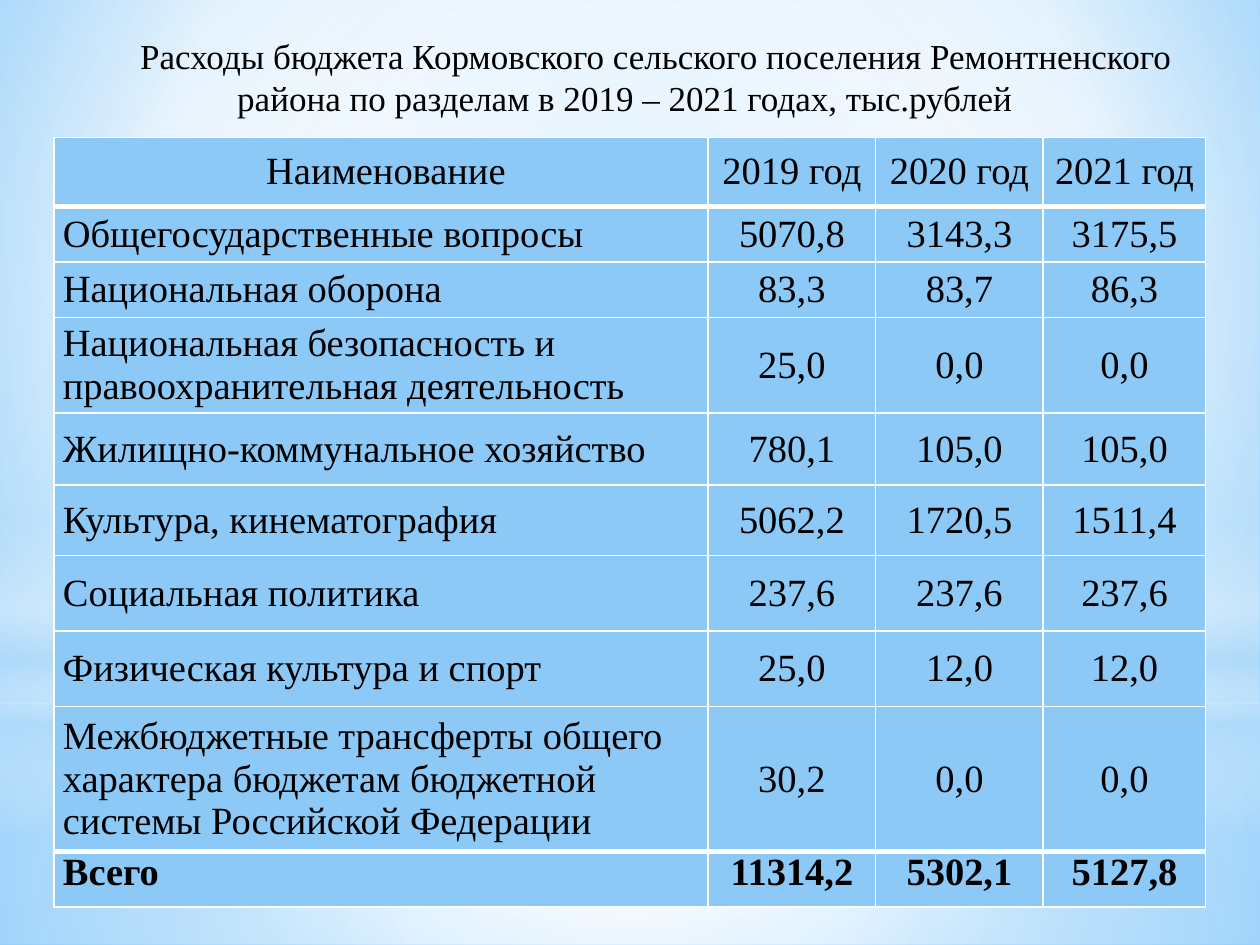
"""Build a slide with a table of village budget spending by section."""
from lxml import etree
from pptx import Presentation, util as u
from pptx.dml import color
from pptx.enum import shapes, text
from pptx.oxml import ns

COLORS = {"white": "FFFFFF", "black": "000000", "cell": "8CC9F7",
          "mist": "B4DCFA", "sky": "9ED5FF", "deep": "5BB9FF"}
GRID_COLS, GRID_ROWS = 100, 75
CENTER = (50, 50, 50, 50)
COL_WIDTHS = (51.9, 13.3, 13.3, 12.9)
ROW_HEIGHTS = (5.5, 4.4, 4.4, 7.6, 5.7, 5.6, 6, 6, 11.5, 4.4)
TITLE = ("Расходы бюджета Кормовского сельского поселения Ремонтненского "
         "района по разделам в 2019 – 2021 годах, тыс.рублей")
SPENDING = (
    (" Наименование", "2019 год", "2020 год", "2021 год"),
    ("Общегосударственные вопросы", "5070,8", "3143,3", "3175,5"),
    ("Национальная оборона", "83,3", "83,7", "86,3"),
    ("Национальная безопасность и правоохранительная деятельность",
     "25,0", "0,0", "0,0"),
    ("Жилищно-коммунальное хозяйство", "780,1", "105,0", "105,0"),
    ("Культура, кинематография", "5062,2", "1720,5", "1511,4"),
    ("Социальная политика", "237,6", "237,6", "237,6"),
    ("Физическая культура и спорт", "25,0", "12,0", "12,0"),
    ("Межбюджетные трансферты общего характера бюджетам бюджетной системы "
     "Российской Федерации", "30,2", "0,0", "0,0"),
    ("Всего", "11314,2", "5302,1", "5127,8"),
)


class Deck:
    """Hold the style and the current slide, and draw its elements."""

    def __init__(self, prs, font="Times New Roman"):
        self.s = prs.slides.add_slide(prs.slide_layouts[6])
        self.font = font
        self.col = prs.slide_width / GRID_COLS
        self.row = prs.slide_height / GRID_ROWS

    def box(self, x, y, w, h):
        """Turn grid columns and rows into slide lengths."""
        return (round(x * self.col), round(y * self.row),
                round(w * self.col), round(h * self.row))

    def gradient(self, fill, element, stops, center=None):
        """Fill with stops of position, colour and opacity."""
        fill.gradient()
        grad = element.find(".//" + ns.qn("a:gradFill"))
        for child in list(grad):
            grad.remove(child)
        gs_list = etree.SubElement(grad, ns.qn("a:gsLst"))
        for pos, name, alpha in stops:
            gs = etree.SubElement(gs_list, ns.qn("a:gs"), pos=str(pos * 1000))
            clr = etree.SubElement(gs, ns.qn("a:srgbClr"), val=COLORS[name])
            etree.SubElement(clr, ns.qn("a:alpha"), val=str(alpha * 1000))
        if center:
            circle = etree.SubElement(grad, ns.qn("a:path"), path="circle")
            sides = {side: str(share * 1000) for side, share in zip("ltrb", center)}
            etree.SubElement(circle, ns.qn("a:fillToRect"), sides)
        else:
            etree.SubElement(grad, ns.qn("a:lin"), ang="5400000", scaled="0")

    def background(self, stops, center):
        """Fill the slide background."""
        self.gradient(self.s.background.fill, self.s.element, stops, center)

    def glow(self, kind, place, stops, center=None):
        """Add a translucent gradient shape."""
        sp = self.s.shapes.add_shape(kind, *self.box(*place))
        sp.shadow.inherit = False
        sp.line.fill.background()
        self.gradient(sp.fill, sp.element, stops, center)

    def label(self, tf, words, size, align, bold=False):
        """Put one formatted paragraph in a text frame."""
        tf.text = words
        p = tf.paragraphs[0]
        p.alignment = align
        font = p.runs[0].font
        font.name, font.size, font.bold = self.font, u.Pt(size), bold
        font.color.rgb = color.RGBColor.from_string(COLORS["black"])
        return p

    def title(self, place, words):
        """Add the centred heading with its first-line indent."""
        tf = self.s.shapes.add_textbox(*self.box(*place)).text_frame
        tf.word_wrap = True
        tf.vertical_anchor = text.MSO_ANCHOR.MIDDLE
        p = self.label(tf, words, 20, text.PP_ALIGN.CENTER)
        p._p.get_or_add_pPr().set("indent", str(u.Inches(0.49)))

    def borders(self, cell, top, bottom):
        """Draw white cell borders with the given widths in points."""
        tc_pr = cell._tc.get_or_add_tcPr()
        for side, width in (("L", 1), ("R", 1), ("T", top), ("B", bottom)):
            ln = etree.SubElement(tc_pr, ns.qn("a:ln" + side), w=str(u.Pt(width)))
            fill = etree.SubElement(ln, ns.qn("a:solidFill"))
            etree.SubElement(fill, ns.qn("a:srgbClr"), val=COLORS["white"])

    def table(self, x, y, rows):
        """Add the table, ruled off below its header and above its total."""
        place = self.box(x, y, sum(COL_WIDTHS), sum(ROW_HEIGHTS))
        tbl = self.s.shapes.add_table(len(rows), len(rows[0]), *place).table
        tbl.horz_banding = False
        for column, width in zip(tbl.columns, COL_WIDTHS):
            column.width = round(width * self.col)
        for row, height in zip(tbl.rows, ROW_HEIGHTS):
            row.height = round(height * self.row)
        last = len(rows) - 1
        for i, row in enumerate(rows):
            for j, words in enumerate(row):
                cell = tbl.cell(i, j)
                self.borders(cell, 3 if i in (1, last) else 1,
                             3 if i in (0, last - 1) else 1)
                cell.fill.solid()
                cell.fill.fore_color.rgb = color.RGBColor.from_string(COLORS["cell"])
                cell.margin_left = cell.margin_right = u.Inches(0.07)
                cell.margin_top = cell.margin_bottom = 0
                cell.vertical_anchor = (text.MSO_ANCHOR.TOP if i == last
                                        else text.MSO_ANCHOR.MIDDLE)
                align = (text.PP_ALIGN.LEFT if i and not j
                         else text.PP_ALIGN.CENTER)
                self.label(cell.text_frame, words, 22, align, i == last)


def main():
    """Build and save the slide."""
    prs = Presentation()
    prs.slide_width, prs.slide_height = u.Inches(10), u.Inches(7.5)
    deck = Deck(prs)
    rect, oval = shapes.MSO_SHAPE.RECTANGLE, shapes.MSO_SHAPE.OVAL
    deck.background([(0, "sky", 100), (60, "white", 100), (100, "deep", 100)],
                    (20, 10, 20, 60))
    deck.glow(rect, (0, 55.8, 100, 19.2),
              [(0, "white", 91), (37, "white", 76), (100, "mist", 79)], CENTER)
    deck.glow(rect, (0, 0, 100, 55.8),
              [(0, "white", 89), (48, "white", 62), (100, "mist", 79)], CENTER)
    deck.glow(rect, (0, 41.2, 100, 25),
              [(0, "white", 0), (29, "white", 30), (45, "mist", 40),
               (55, "white", 26), (65, "mist", 60), (100, "white", 0)])
    deck.glow(oval, (0, 17.5, 100, 55.8),
              [(0, "white", 100), (56, "white", 0)], CENTER)
    deck.table(4.3, 10.9, SPENDING)
    deck.title((3.9, 2.2, 91.4, 7.7), TITLE)
    prs.save("out.pptx")


if __name__ == "__main__":
    main()
